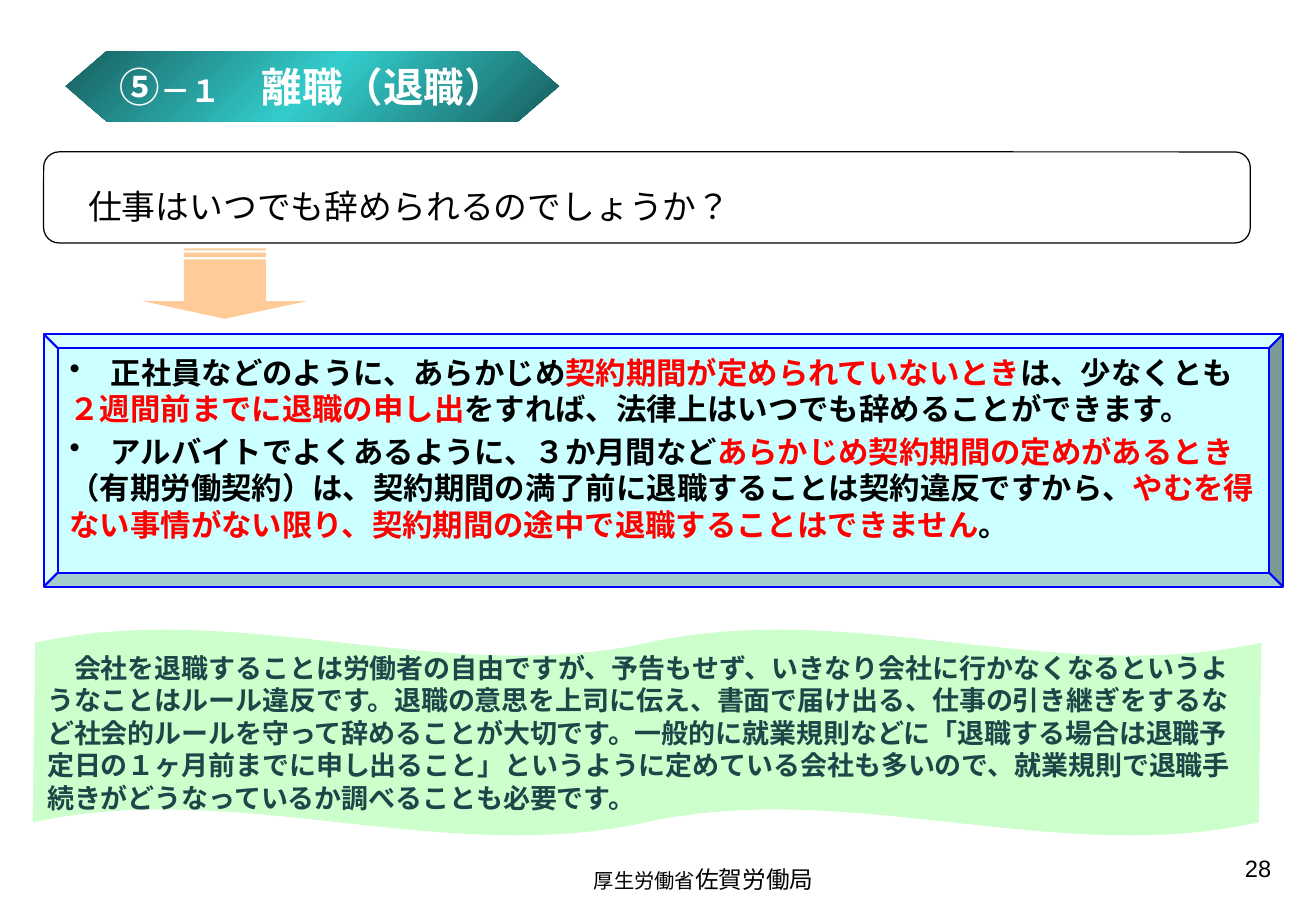
from lxml.etree import SubElement
from pptx import Presentation
from pptx.dml.color import RGBColor
from pptx.enum.lang import MSO_LANGUAGE_ID
from pptx.enum.shapes import MSO_SHAPE
from pptx.enum.text import MSO_ANCHOR, PP_ALIGN
from pptx.oxml.ns import qn
from pptx.util import Inches, Pt

BLACK = RGBColor(0, 0, 0)
WHITE = RGBColor(255, 255, 255)
RED = RGBColor(255, 0, 0)
BLUE = RGBColor(0, 0, 255)
SLATE = RGBColor(0x1E, 0x46, 0x49)
TEAL = RGBColor(0x33, 0xCC, 0xCC)
DARK_TEAL = RGBColor(0x18, 0x5E, 0x5E)
PEACH = RGBColor(0xFF, 0xCC, 0x99)
PALE_CYAN = RGBColor(0xCC, 0xFF, 0xFF)
PALE_GREEN = RGBColor(0xCC, 0xFF, 0xCC)

WIDTH, HEIGHT = Inches(10.83), Inches(7.5)
BANNER_STOPS = [(0, DARK_TEAL), (50, TEAL), (100, DARK_TEAL)]

TITLE = [[("⑤", 24, WHITE, True), ("－１", 18, WHITE, True),
          ("　離職（退職）", 24, WHITE, True)]]
QUESTION = [[(" ", 28, BLACK, False),
             ("仕事はいつでも辞められるのでしょうか？", 20, BLACK, False)]]
ANSWER = [
    [("　正社員などのように、あらかじめ", 18, BLACK, True),
     ("契約期間が定められていないとき", 18, RED, True),
     ("は、少なくとも", 18, BLACK, True),
     ("２週間前までに退職の申し出", 18, RED, True),
     ("をすれば、法律上はいつでも辞めることができます。", 18, BLACK, True)],
    [("　アルバイトでよくあるように、３か月間など", 18, BLACK, True),
     ("あらかじめ契約期間の定めがあるとき", 18, RED, True),
     ("（有期労働契約）は、契約期間の満了前に退職することは契約違反ですから、", 18, BLACK, True),
     ("やむを得ない事情がない限り、契約期間の途中で退職することはできません", 18, RED, True),
     ("。", 18, BLACK, True)],
]
ADVICE = [[(
    "　会社を退職することは労働者の自由ですが、予告もせず、いきなり会社に行かなくなるというようなことは"
    "ルール違反です。退職の意思を上司に伝え、書面で届け出る、仕事の引き継ぎをするなど社会的ルールを守って"
    "辞めることが大切です。一般的に就業規則などに「退職する場合は退職予定日の１ヶ月前までに申し出ること」"
    "というように定めている会社も多いので、就業規則で退職手続きがどうなっているか調べることも必要です。",
    16, SLATE, True)]]
FOOTER = [[("厚生労働省", 12, BLACK, False), ("佐賀労働局", 14, BLACK, False)]]
PAGE = [[("28", 14, BLACK, False)]]


def place(left, top, width, height):
    """Turn percentages of the slide into a position and size."""
    return [round(share * side / 100) for share, side in
            zip((left, top, width, height), (WIDTH, HEIGHT) * 2)]


def add_shape(s, kind, box, adjustments, fill=None, line=None, line_width=1):
    """Add a preset shape without shadow."""
    sp = s.shapes.add_shape(kind, *place(*box))
    sp.shadow.inherit = False
    for i, value in enumerate(adjustments):
        sp.adjustments[i] = value
    for part, color in ((sp.fill, fill), (sp.line.fill, line)):
        if color is None:
            part.background()
        else:
            part.solid()
            part.fore_color.rgb = color
    if line is not None:
        sp.line.width = Pt(line_width)
    return sp


def write(sp, paragraphs, anchor=MSO_ANCHOR.TOP, wrap=True, bullet=False, **layout):
    """Fill a shape with formatted paragraphs."""
    tf = sp.text_frame
    tf.word_wrap, tf.vertical_anchor = wrap, anchor
    for i, runs in enumerate(paragraphs):
        p = tf.paragraphs[0] if i == 0 else tf.add_paragraph()
        for name, value in ({"alignment": PP_ALIGN.LEFT} | layout).items():
            setattr(p, name, value)
        if bullet:
            SubElement(p._p.get_or_add_pPr(), qn("a:buChar"), char="•")
        for text, size, color, bold in runs:
            r = p.add_run()
            r.text = text
            r.font.color.rgb = color
            style = {"name": "Arial", "size": Pt(size), "bold": bold,
                     "language_id": MSO_LANGUAGE_ID.JAPANESE}
            for name, value in style.items():
                setattr(r.font, name, value)


def set_gradient(sp, stops):
    """Fill a shape with a diagonal gradient."""
    sp.fill.gradient()
    sp.fill.gradient_angle = 315
    gs_list = sp._element.spPr.find(qn("a:gradFill")).find(qn("a:gsLst"))
    for gs in list(gs_list):
        gs_list.remove(gs)
    for share, color in stops:
        gs = SubElement(gs_list, qn("a:gs"), pos=str(share * 1000))
        SubElement(gs, qn("a:srgbClr"), val=str(color))


def main():
    """Build and save the slide."""
    prs = Presentation()
    prs.slide_width, prs.slide_height = WIDTH, HEIGHT
    s = prs.slides.add_slide(prs.slide_layouts[6])

    add_shape(s, MSO_SHAPE.ROUNDED_RECTANGLE, (3.32, 16.67, 91.69, 10), [0.17],
              line=BLACK, line_width=0.75)
    banner = add_shape(s, MSO_SHAPE.HEXAGON, (4.99, 5.6, 37.49, 7.73), [0.58, 1.15])
    set_gradient(banner, BANNER_STOPS)
    write(banner, TITLE, MSO_ANCHOR.MIDDLE, wrap=False, alignment=PP_ALIGN.CENTER)

    arrow = add_shape(s, MSO_SHAPE.STRIPED_RIGHT_ARROW, (14.4, 22.13, 5.36, 18),
                      [0.5, 0.25], PEACH)
    arrow.rotation = 90

    answer = add_shape(s, MSO_SHAPE.BEVEL, (3.32, 36.67, 94.18, 27.73), [0.055],
                       PALE_CYAN, BLUE, 1.25)
    write(answer, ANSWER, bullet=True, space_before=Pt(3.6))
    advice = add_shape(s, MSO_SHAPE.DOUBLE_WAVE, (2.49, 69.07, 93.35, 22.67),
                       [0.065, -0.001], PALE_GREEN)
    write(advice, ADVICE, MSO_ANCHOR.MIDDLE)

    texts = [
        ((4.99, 17.6, 90.03, 10), QUESTION,
         {"anchor": MSO_ANCHOR.MIDDLE, "line_spacing": 0.8}),
        ((44.23, 94.27, 22.53, 4.4), FOOTER, {}),
        ((74.15, 93.07, 23.36, 6.93), PAGE, {"alignment": PP_ALIGN.RIGHT}),
    ]
    for box, paragraphs, layout in texts:
        write(s.shapes.add_textbox(*place(*box)), paragraphs, **layout)

    prs.save("out.pptx")


if __name__ == "__main__":
    main()
